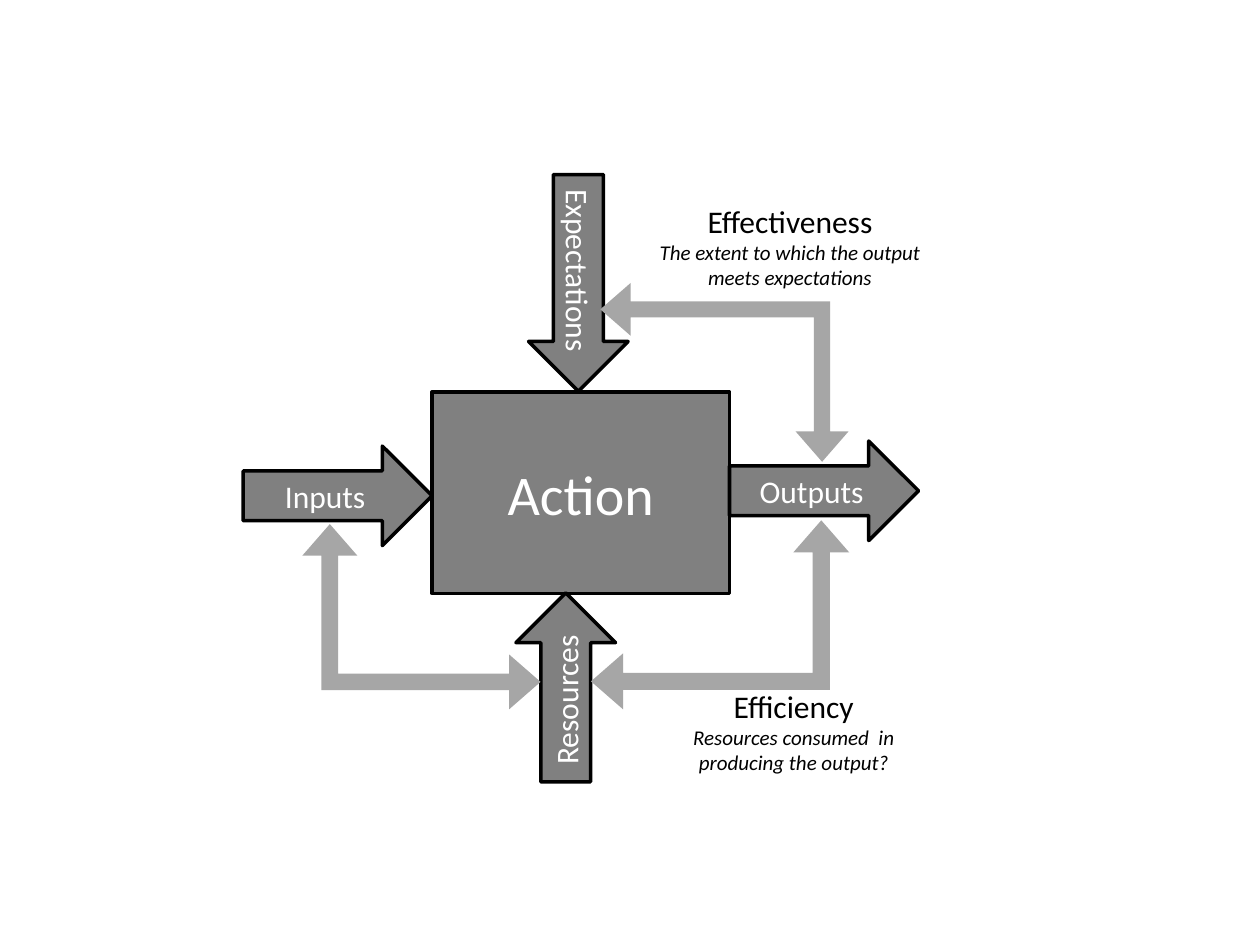
"""Build a slide showing an action with its inputs, outputs, resources and expectations."""
from pptx import Presentation
from pptx.dml.color import RGBColor
from pptx.enum.shapes import MSO_SHAPE
from pptx.enum.text import MSO_ANCHOR, MSO_AUTO_SIZE, PP_ALIGN
from pptx.util import Inches, Pt

RECTANGLE = MSO_SHAPE.RECTANGLE
RIGHT_ARROW = MSO_SHAPE.RIGHT_ARROW
LEFT_UP_ARROW = MSO_SHAPE.LEFT_UP_ARROW
CENTER = PP_ALIGN.CENTER
MIDDLE = MSO_ANCHOR.MIDDLE
FIT_SHAPE = MSO_AUTO_SIZE.SHAPE_TO_FIT_TEXT

GRAY = RGBColor(0x80, 0x80, 0x80)
LIGHT_GRAY = RGBColor(0xA6, 0xA6, 0xA6)
BLACK = RGBColor(0, 0, 0)
WHITE = RGBColor(255, 255, 255)
FONT = "Calibri"
BENT_ARROW_PROPORTIONS = (0.09, 0.148, 0.17)

PROCESS_PARTS = [
    ("Action", RECTANGLE, (3.43, 3.11, 2.36, 1.6), 0, 32),
    ("Inputs", RIGHT_ARROW, (1.93, 3.54, 1.5, 0.79), 0, 18),
    ("Outputs", RIGHT_ARROW, (5.79, 3.5, 1.5, 0.79), 0, 18),
    ("Resources", RIGHT_ARROW, (3.74, 5.06, 1.5, 0.79), 270, 18),
    ("Expectations", RIGHT_ARROW, (3.73, 1.85, 1.72, 0.79), 90, 18),
]
RELATIONS = [
    ((4.69, 4.13, 2.05, 1.5), 0),
    ((5.04, 1.97, 1.42, 1.97), 270),
    ((2.61, 3.95, 1.47, 1.89), 90),
]
MEASURES = [
    ("Effectiveness", "The extent to which the output meets expectations",
     (5.13, 1.55, 2.28, 0.81)),
    ("Efficiency", "Resources consumed  in producing the output?",
     (5.16, 5.4, 2.28, 0.81)),
]


def add_filled_shape(slide, kind, box, rotation, color):
    shape = slide.shapes.add_shape(kind, *map(Inches, box))
    shape.rotation = rotation
    shape.shadow.inherit = False
    shape.fill.solid()
    shape.fill.fore_color.rgb = color
    return shape


def format_paragraph(paragraph, size, color, italic=False):
    paragraph.alignment = CENTER
    for run in paragraph.runs:
        run.font.name = FONT
        run.font.size = Pt(size)
        run.font.color.rgb = color
        run.font.italic = italic


def add_process_part(slide, label, kind, box, rotation, size):
    part = add_filled_shape(slide, kind, box, rotation, GRAY)
    part.line.color.rgb = BLACK
    part.line.width = Pt(2)
    part.text_frame.text = label
    part.text_frame.vertical_anchor = MIDDLE
    format_paragraph(part.text_frame.paragraphs[0], size, WHITE)


def add_relation(slide, box, rotation):
    relation = add_filled_shape(slide, LEFT_UP_ARROW, box, rotation, LIGHT_GRAY)
    relation.line.fill.background()
    for index, proportion in enumerate(BENT_ARROW_PROPORTIONS):
        relation.adjustments[index] = proportion


def add_measure(slide, name, definition, box):
    frame = slide.shapes.add_textbox(*map(Inches, box)).text_frame
    frame.word_wrap = True
    frame.auto_size = FIT_SHAPE
    frame.text = f"{name}\n{definition}"
    heading, explanation = frame.paragraphs
    format_paragraph(heading, 18, BLACK)
    format_paragraph(explanation, 12, BLACK, italic=True)


def main():
    presentation = Presentation()
    presentation.slide_width = Inches(10)
    presentation.slide_height = Inches(7.5)
    slide = presentation.slides.add_slide(presentation.slide_layouts[6])
    for part in PROCESS_PARTS:
        add_process_part(slide, *part)
    for relation in RELATIONS:
        add_relation(slide, *relation)
    for measure in MEASURES:
        add_measure(slide, *measure)
    presentation.save("out.pptx")


if __name__ == "__main__":
    main()
